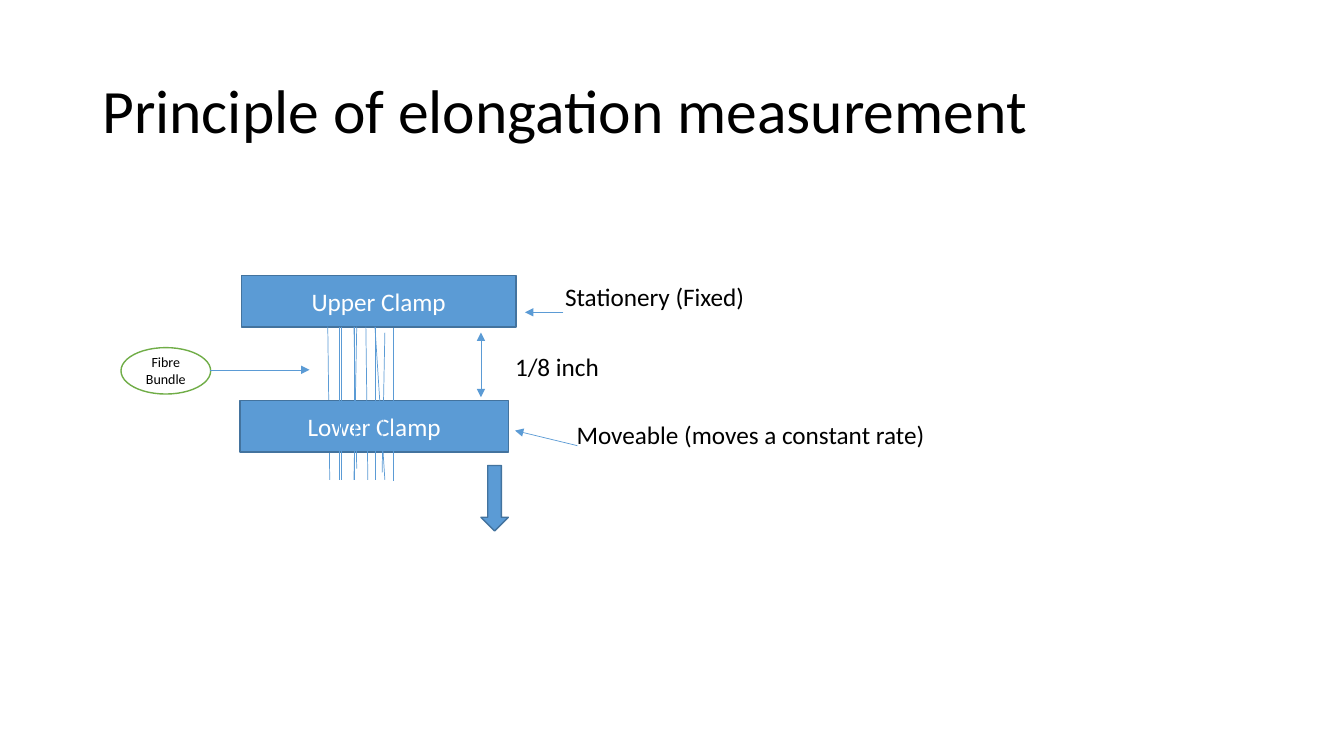
from lxml.etree import SubElement
from pptx import Presentation
from pptx.dml.color import RGBColor
from pptx.enum.shapes import MSO_CONNECTOR, MSO_SHAPE
from pptx.enum.text import MSO_ANCHOR, PP_ALIGN
from pptx.oxml.ns import qn
from pptx.util import Cm, Pt

BLUE = "5B9BD5"
DARK_BLUE = "43739E"
GREEN = "70AD47"
WHITE = "FFFFFF"
BLACK = "000000"

FIBRE_TOP = 8.23
FIBRE_BOTTOM = 12.09
BACK_FIBRE = (8.26, FIBRE_TOP, 8.31, FIBRE_BOTTOM)
FRONT_FIBRES = [
    (8.59, FIBRE_TOP, 8.59, FIBRE_BOTTOM),
    (8.56, FIBRE_TOP, 8.56, FIBRE_BOTTOM),
    (8.99, FIBRE_TOP, 8.92, FIBRE_BOTTOM),
    (9.22, FIBRE_TOP, 9.27, FIBRE_BOTTOM),
    (9.45, FIBRE_TOP, 9.45, FIBRE_BOTTOM),
    (9.91, 8.26, 9.91, 12.12),
    (9.45, FIBRE_TOP, 9.7, FIBRE_BOTTOM),
    (8.92, FIBRE_TOP, 8.92, FIBRE_BOTTOM),
    (8.92, FIBRE_TOP, 8.99, 11.81),
    (9.7, 8.38, 9.63, 11.91),
]
LABELS = [
    ("Stationery (Fixed)", 14.24, 7.53),
    ("1/8 inch", 12.98, 9.27),
    ("Moveable (moves a constant rate)", 14.53, 11),
]


def color(value):
    return RGBColor.from_string(value)


def write(shape, text, size, text_color, alignment):
    frame = shape.text_frame
    frame.word_wrap = True
    frame.vertical_anchor = MSO_ANCHOR.MIDDLE
    paragraph = frame.paragraphs[0]
    paragraph.alignment = alignment
    paragraph.line_spacing = 0.9 if alignment == PP_ALIGN.LEFT else 1.0
    run = paragraph.add_run()
    run.text = text
    run.font.name = "Calibri"
    run.font.size = Pt(size)
    run.font.color.rgb = color(text_color)


def add_text(slide, text, left, top, width, height, size, inset):
    shape = slide.shapes.add_textbox(Cm(left), Cm(top), Cm(width), Cm(height))
    shape.text_frame.margin_left = Cm(inset)
    shape.text_frame.margin_right = Cm(inset)
    write(shape, text, size, BLACK, PP_ALIGN.LEFT)


def add_figure(slide, kind, left, top, width, height, fill=BLUE, line=DARK_BLUE):
    shape = slide.shapes.add_shape(kind, Cm(left), Cm(top), Cm(width), Cm(height))
    shape.shadow.inherit = False
    shape.fill.solid()
    shape.fill.fore_color.rgb = color(fill)
    shape.line.color.rgb = color(line)
    shape.line.width = Pt(1)
    return shape


def add_clamp(slide, text, left, top, width):
    clamp = add_figure(slide, MSO_SHAPE.RECTANGLE, left, top, width, 1.3)
    write(clamp, text, 18, WHITE, PP_ALIGN.CENTER)


def add_line(slide, start_x, start_y, end_x, end_y, arrow_ends=()):
    connector = slide.shapes.add_connector(
        MSO_CONNECTOR.STRAIGHT, Cm(start_x), Cm(start_y), Cm(end_x), Cm(end_y)
    )
    connector.line.color.rgb = color(BLUE)
    connector.line.width = Pt(0.5)
    properties = connector._element.spPr
    SubElement(properties, qn("a:effectLst"))
    for end in arrow_ends:
        SubElement(properties.find(qn("a:ln")), qn(f"a:{end}"), type="triangle")


def main():
    presentation = Presentation()
    presentation.slide_width = Cm(33.87)
    presentation.slide_height = Cm(19.05)
    slide = presentation.slides.add_slide(presentation.slide_layouts[6])

    add_text(slide, "Principle of elongation measurement", 2.33, 1.01, 29.21, 3.68, 44, 0.25)
    for text, left, middle in LABELS:
        add_text(slide, text, left, middle + 0.4 - 0.8, 12, 0.8, 18, 0)

    add_clamp(slide, "Upper Clamp", 6.08, 6.94, 6.93)
    add_line(slide, *BACK_FIBRE)
    add_clamp(slide, "Lower Clamp", 6.05, 10.09, 6.76)
    for fibre in FRONT_FIBRES:
        add_line(slide, *fibre)

    add_figure(slide, MSO_SHAPE.DOWN_ARROW, 12.12, 11.73, 0.69, 1.65)
    add_line(slide, 12.12, 8.38, 12.12, 10.01, ("headEnd", "tailEnd"))
    bundle = add_figure(slide, MSO_SHAPE.OVAL, 3.05, 8.76, 2.26, 1.17, WHITE, GREEN)
    write(bundle, "Fibre Bundle", 10, BLACK, PP_ALIGN.CENTER)

    add_line(slide, 5.28, 9.32, 7.8, 9.32, ("tailEnd",))
    add_line(slide, 14.2, 7.87, 13.23, 7.87, ("tailEnd",))
    add_line(slide, 14.55, 11.23, 12.98, 10.85, ("tailEnd",))

    presentation.save("out.pptx")


if __name__ == "__main__":
    main()
